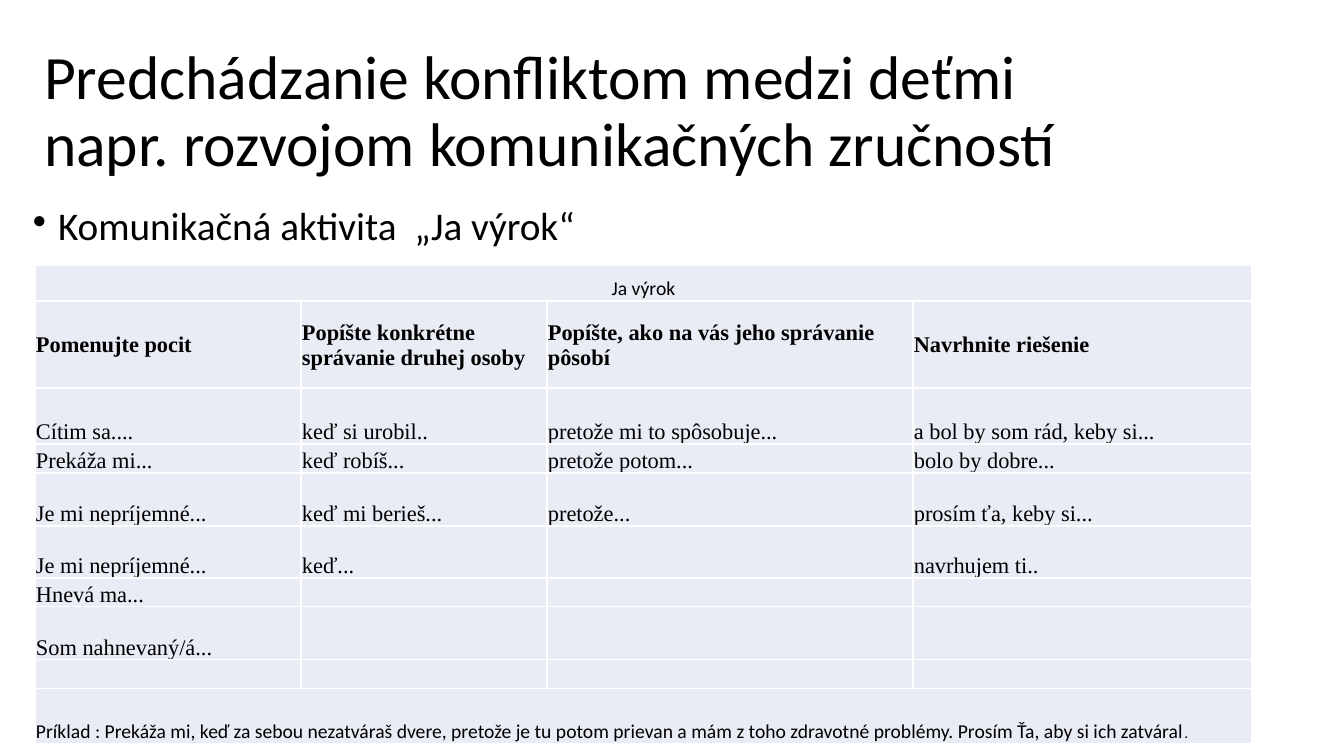
"""Build the slide on preventing conflicts between children."""
import pptx
import pptx.util
import pptx.oxml
import pptx.oxml.ns
from pptx.dml.color import RGBColor
from pptx.enum.text import MSO_ANCHOR, MSO_AUTO_SIZE, PP_ALIGN

TITLE = "Predchádzanie konfliktom medzi deťmi \vnapr. rozvojom komunikačných zručností"
BULLET = "Komunikačná aktivita  „Ja výrok“"
HEAD = "Ja výrok"
ROWS = [
    ("Pomenujte pocit", "Popíšte konkrétne správanie druhej osoby",
     "Popíšte, ako na vás jeho správanie pôsobí", "Navrhnite riešenie"),
    ("Cítim sa....", "keď si urobil..", "pretože mi to spôsobuje...",
     "a bol by som rád, keby si..."),
    ("Prekáža mi...", "keď robíš...", "pretože potom...", "bolo by dobre..."),
    ("Je mi nepríjemné...", "keď mi berieš...", "pretože...", "prosím ťa, keby si..."),
    ("Je mi nepríjemné...", "keď...", "", "navrhujem ti.."),
    ("Hnevá ma...", "", "", ""),
    ("Som nahnevaný/á...", "", "", ""),
    ("", "", "", ""),
]
SAMPLE = ("Príklad : Prekáža mi, keď za sebou nezatváraš dvere, pretože je tu potom "
          "prievan a mám z toho zdravotné problémy. Prosím Ťa, aby si ich zatváral")
WIDTHS = [266, 246, 366, 339]
HEIGHTS = [36, 87, 56, 29, 53, 52, 29, 53, 29, 55]
COLORS = {"text": "000000", "cell": "E9EBF5", "line": "FFFFFF"}
SANS, SERIF = "Calibri", "Times New Roman"


def px(num):
    return pptx.util.Emu(round(num * 914400 / 100.8))


def place(shape, left, top, width, height):
    shape.left, shape.top = px(left), px(top)
    shape.width, shape.height = px(width), px(height)


def style(item, size, face, bold=False):
    font = item.font
    font.size, font.name, font.bold = pptx.util.Pt(size), face, bold
    font.color.rgb = RGBColor.from_string(COLORS["text"])


def write(shape, text, size, anchor):
    frame = shape.text_frame
    frame.word_wrap = True
    frame.auto_size = MSO_AUTO_SIZE.NONE
    frame.vertical_anchor = anchor
    para = frame.paragraphs[0]
    para.text = text
    para.alignment = PP_ALIGN.LEFT
    para.line_spacing = 0.9
    style(para, size, SANS)
    return para


def paint(cell):
    props = cell._tc.get_or_add_tcPr()
    for side in ("lnL", "lnR", "lnT", "lnB"):
        props.append(pptx.oxml.parse_xml(
            f'<a:{side} {pptx.oxml.ns.nsdecls("a")} w="12700"><a:solidFill>'
            f'<a:srgbClr val="{COLORS["line"]}"/></a:solidFill></a:{side}>'))
    cell.fill.solid()
    cell.fill.fore_color.rgb = RGBColor.from_string(COLORS["cell"])
    cell.margin_left = cell.margin_right = cell.margin_top = px(1)
    cell.margin_bottom = 0
    cell.vertical_anchor = MSO_ANCHOR.BOTTOM


def add_bullet(slide):
    box = slide.shapes.add_textbox(0, 0, 0, 0)
    place(box, 23, 202, 1282, 58)
    para = write(box, BULLET, 28, MSO_ANCHOR.TOP)
    para.space_before = pptx.util.Pt(10)
    props = para._p.get_or_add_pPr()
    props.set("marL", "228600")
    props.set("indent", "-228600")
    mark = pptx.oxml.parse_xml(f'<a:buChar {pptx.oxml.ns.nsdecls("a")} char="•"/>')
    props.find(pptx.oxml.ns.qn("a:defRPr")).addprevious(mark)


def add_grid(slide):
    frame = slide.shapes.add_table(len(HEIGHTS), len(WIDTHS), px(35), px(265),
                                   px(sum(WIDTHS)), px(sum(HEIGHTS)))
    table = frame.table
    table.first_row = table.horz_banding = False
    for col, width in zip(table.columns, WIDTHS):
        col.width = px(width)
    for row, height in zip(table.rows, HEIGHTS):
        row.height = px(height)
    for cell in table.iter_cells():
        paint(cell)
    for r, texts in enumerate(ROWS, 1):
        for c, text in enumerate(texts):
            cell = table.cell(r, c)
            para = cell.text_frame.paragraphs[0]
            para.text = text
            style(para, 16, SERIF, r == 1)
            if r == 1:
                cell.vertical_anchor = MSO_ANCHOR.MIDDLE
    last = len(HEIGHTS) - 1
    for r in (0, last):
        table.cell(r, 0).merge(table.cell(r, len(WIDTHS) - 1))
    para = table.cell(0, 0).text_frame.paragraphs[0]
    para.text = HEAD
    para.alignment = PP_ALIGN.CENTER
    style(para, 14, SANS)
    para = table.cell(last, 0).text_frame.paragraphs[0]
    for text, size in ((SAMPLE, 14), (".", 11)):
        run = para.add_run()
        run.text = text
        style(run, size, SANS)


def main():
    deck = pptx.Presentation()
    deck.slide_width, deck.slide_height = px(1344), px(756)
    slide = deck.slides.add_slide(deck.slide_layouts[5])
    title = slide.shapes.title
    place(title, 34, 40, 1218, 146)
    write(title, TITLE, 44, MSO_ANCHOR.MIDDLE)
    add_bullet(slide)
    add_grid(slide)
    deck.save("out.pptx")


if __name__ == "__main__":
    main()
